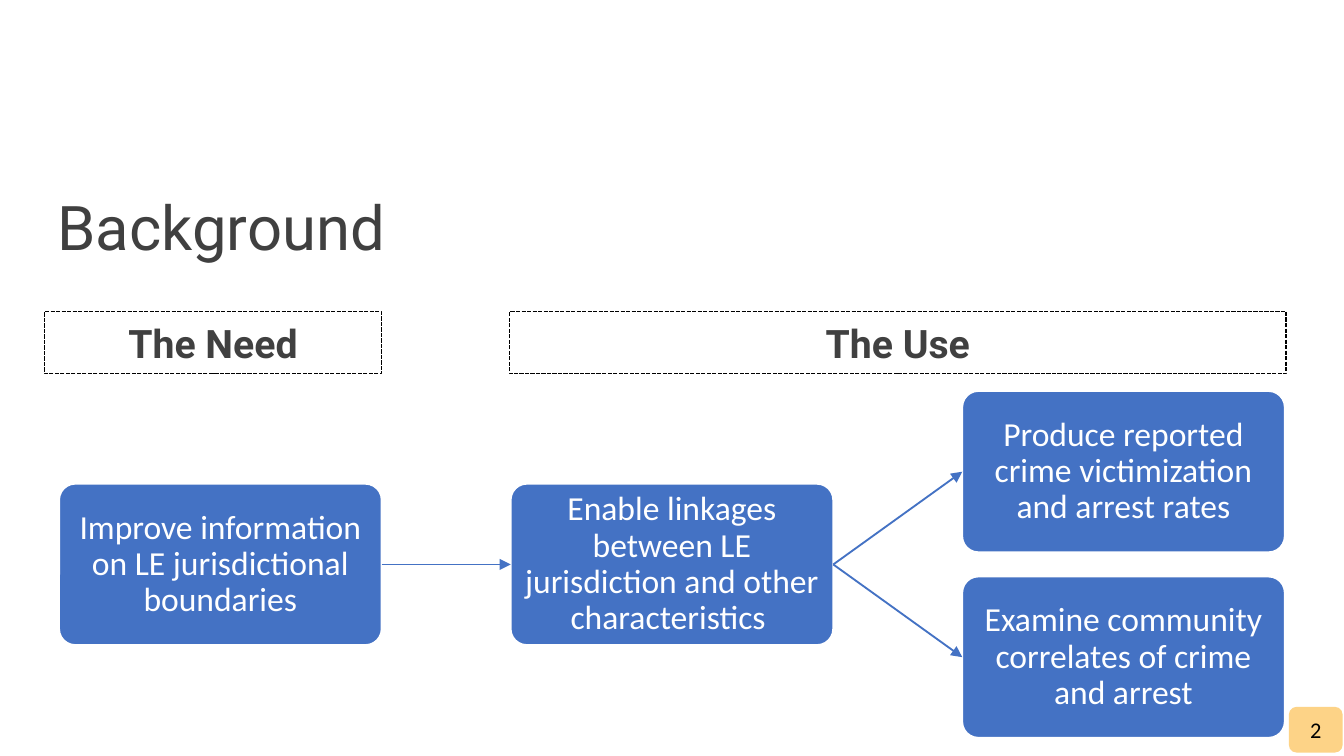
from pptx import Presentation
from pptx.util import Inches, Pt
from pptx.dml.color import RGBColor
from pptx.enum.dml import MSO_LINE
from pptx.enum.shapes import MSO_CONNECTOR, MSO_SHAPE
from pptx.enum.text import MSO_ANCHOR as ANCHOR, PP_ALIGN as ALIGN
from pptx.oxml.ns import qn
from lxml import etree

# Content
TITLE = "Background"
HEADERS = [("The Need", 0.33, 2.51), ("The Use", 3.79, 5.78)]  # text, left, width
# name: (text, column, rows below the middle)
BOXES = {
    "need": ("Improve information on LE jurisdictional boundaries", 0, 0),
    "link": ("Enable linkages between LE jurisdiction and other characteristics ", 1, 0),
    "rates": ("Produce reported crime victimization and arrest rates", 2, -0.5),
    "correlates": ("Examine community correlates of crime and arrest", 2, 0.5),
}
ARROWS = [("need", "link"), ("link", "rates"), ("link", "correlates")]
PAGE = "2"

# Layout and colours
BOX_W, BOX_H = 2.4, 1.2
LEFT, COL_STEP = 0.44, 3.36
TOP, ROW_STEP = 3.6, 1.38
BLUE, DARK, WHITE, BLACK, YELLOW = "4472C4", "404040", "FFFFFF", "000000", "FDD387"


def rgb(value):
    return RGBColor.from_string(value)


def add_text(sp, text, size, font, color, align=ALIGN.CENTER, anchor=ANCHOR.MIDDLE,
             inset=(0.1, 0.05), bold=False, spacing=0.9):
    tf = sp.text_frame
    tf.word_wrap = True
    tf.vertical_anchor = anchor
    tf.margin_left = tf.margin_right = Inches(inset[0])
    tf.margin_top = tf.margin_bottom = Inches(inset[1])
    p = tf.paragraphs[0]
    p.alignment = align
    p.line_spacing = spacing
    r = p.add_run()
    r.text = text
    r.font.size = Pt(size)
    r.font.name = font
    r.font.bold = bold
    r.font.color.rgb = rgb(color)


def add_box(kind, left, top, width, height, fill=None, line=None, line_width=1):
    sp = slide.shapes.add_shape(kind, Inches(left), Inches(top), Inches(width), Inches(height))
    sp.shadow.inherit = False
    if fill:
        sp.fill.solid()
        sp.fill.fore_color.rgb = rgb(fill)
    else:
        sp.fill.background()
    if line:
        sp.line.color.rgb = rgb(line)
        sp.line.width = Pt(line_width)
    else:
        sp.line.fill.background()
    return sp


def add_arrow(start, end):
    cx = slide.shapes.add_connector(MSO_CONNECTOR.STRAIGHT, 0, 0, 0, 0)
    cx.begin_connect(start, 3)
    cx.end_connect(end, 1)
    cx.line.color.rgb = rgb(BLUE)
    cx.line.width = Pt(1)
    ln = cx._element.spPr.find(qn("a:ln"))
    etree.SubElement(ln, qn("a:tailEnd"), type="triangle")
    etree.SubElement(cx._element.spPr, qn("a:effectLst"))


prs = Presentation()
prs.slide_width = Inches(10)
prs.slide_height = prs.slide_width * 9 // 16
slide = prs.slides.add_slide(prs.slide_layouts[6])

# Title
title = slide.shapes.add_textbox(Inches(0.33), Inches(1.17), Inches(8.62), Inches(1.09))
add_text(title, TITLE, 33, "Roboto", DARK, align=ALIGN.LEFT)

# Flow boxes
boxes = {}
for name, (text, col, row) in BOXES.items():
    sp = add_box(MSO_SHAPE.ROUNDED_RECTANGLE, LEFT + col * COL_STEP, TOP + row * ROW_STEP,
                 BOX_W, BOX_H, BLUE, WHITE)
    sp.adjustments[0] = 0.1
    add_text(sp, text, 18, "Calibri", WHITE, inset=(0.05, 0.05))
    boxes[name] = sp

# Arrows
for start, end in ARROWS:
    add_arrow(boxes[start], boxes[end])

# Column headers
for text, left, width in HEADERS:
    sp = add_box(MSO_SHAPE.RECTANGLE, left, 2.32, width, 0.46, line=BLACK, line_width=0.75)
    sp.line.dash_style = MSO_LINE.SQUARE_DOT
    add_text(sp, text, 21, "Roboto", DARK, anchor=ANCHOR.BOTTOM, bold=True)

# Page number
badge = add_box(MSO_SHAPE.ROUNDED_RECTANGLE, 9.59, 5.26, 0.4, 0.34, YELLOW)
add_text(badge, PAGE, 12, "Calibri", BLACK, spacing=1.0)

prs.save("out.pptx")
